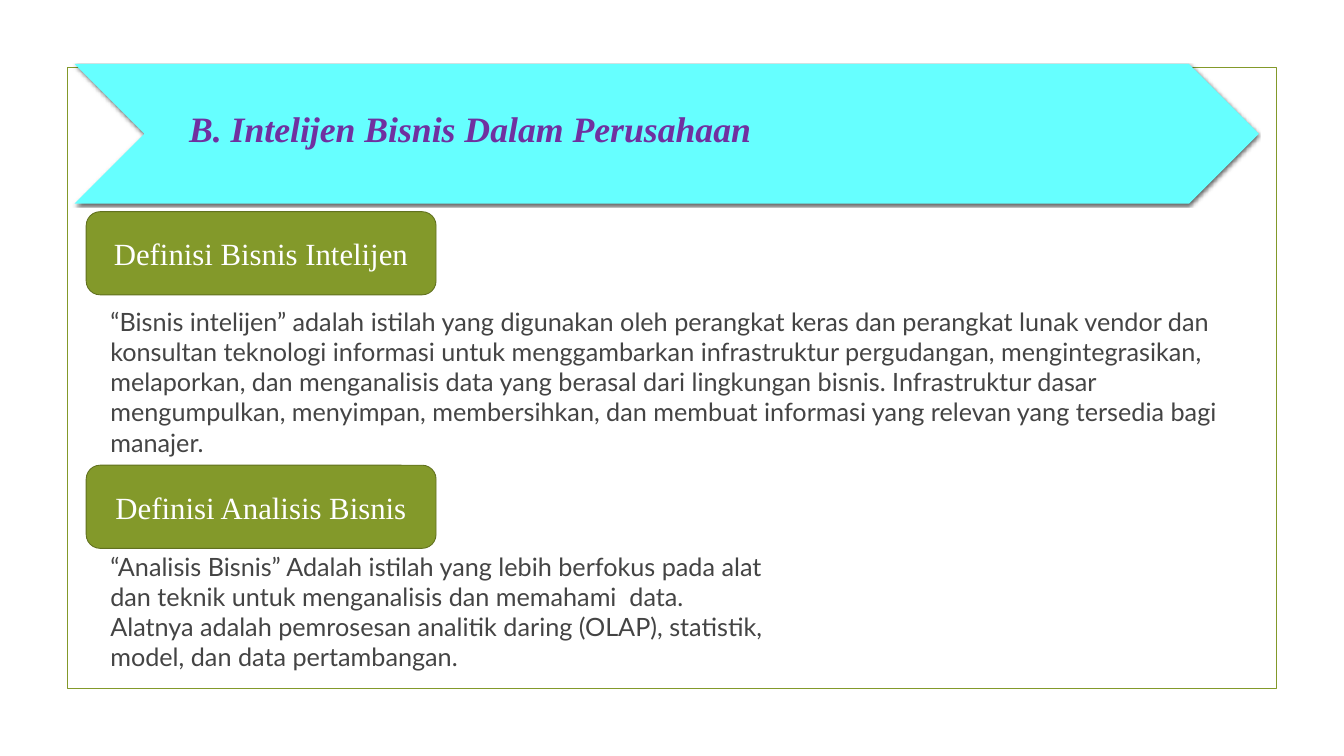
from dataclasses import dataclass, field

from lxml import etree
from pptx import Presentation
from pptx import util as u
from pptx.dml import color as col
from pptx.enum import shapes, text
from pptx.oxml import ns

SCALE = 9144
COLORS = {
    "olive": "83992A",
    "moss": "61711F",
    "cyan": "66FFFF",
    "plum": "7030A0",
    "gray": "444444",
    "white": "FFFFFF",
    "black": "000000",
}
SERIF = "Times New Roman"
BODY = {"name": "Lato", "size": u.Pt(36), "color": "gray"}
LABEL = {"name": SERIF, "size": u.Pt(44), "color": "white"}
TITLE = {"name": SERIF, "size": u.Pt(51), "color": "plum", "bold": True, "italic": True}
MIDDLE = {"vertical_anchor": text.MSO_ANCHOR.MIDDLE}


@dataclass
class Panel:
    kind: shapes.MSO_SHAPE
    box: tuple[int, int, int, int]
    fill: str | None = None
    line: str | None = None
    label: str = ""


@dataclass
class Note:
    box: tuple[int, int, int, int]
    words: str
    font: dict
    frame: dict = field(default_factory=dict)
    para: dict = field(default_factory=dict)


def px(num: int) -> int:
    return num * SCALE


def rgb(name: str) -> col.RGBColor:
    return col.RGBColor.from_string(COLORS[name])


def write(frame, words: str, font: dict, look: dict, para: dict) -> None:
    frame.word_wrap = True
    for key, val in look.items():
        setattr(frame, key, val)
    line = frame.paragraphs[0]
    for key, val in para.items():
        setattr(line, key, val)
    run = line.add_run()
    run.text = words
    for key, val in font.items():
        if key == "color":
            run.font.color.rgb = rgb(val)
        else:
            setattr(run.font, key, val)


def draw_panel(slide, panel: Panel):
    shape = slide.shapes.add_shape(panel.kind, *map(px, panel.box))
    shape.shadow.inherit = False
    if panel.fill:
        shape.fill.solid()
        shape.fill.fore_color.rgb = rgb(panel.fill)
    else:
        shape.fill.background()
    if panel.line:
        shape.line.color.rgb = rgb(panel.line)
        shape.line.width = u.Pt(1.25)
    else:
        shape.line.fill.background()
    if panel.label:
        write(shape.text_frame, panel.label, LABEL, MIDDLE,
              {"alignment": text.PP_ALIGN.CENTER})
    return shape


def draw_note(slide, note: Note) -> None:
    box = slide.shapes.add_textbox(*map(px, note.box))
    write(box.text_frame, note.words, note.font, note.frame, note.para)


def cast(shape) -> None:
    glow = shape.element.spPr.find(ns.qn("a:effectLst"))
    drop = etree.SubElement(glow, ns.qn("a:outerShdw"), blurRad=str(u.Pt(3)),
                            dist=str(u.Pt(2)), dir="5400000", rotWithShape="0")
    tint = etree.SubElement(drop, ns.qn("a:srgbClr"), val=COLORS["black"])
    etree.SubElement(tint, ns.qn("a:alpha"), val="60000")


BORDER = Panel(shapes.MSO_SHAPE.RECTANGLE, (133, 133, 2399, 1233), line="olive")
BANNER = Panel(shapes.MSO_SHAPE.CHEVRON, (148, 127, 2349, 277), fill="cyan")
TABS = [
    Panel(shapes.MSO_SHAPE.ROUNDED_RECTANGLE, (171, top, 694, 165), "olive", "moss", label)
    for top, label in ((420, "Definisi Bisnis Intelijen"), (923, "Definisi Analisis Bisnis"))
]
NOTES = [
    Note((209, 602, 2288, 313),
         "“Bisnis intelijen” adalah istilah yang digunakan oleh perangkat keras dan "
         "perangkat lunak vendor dan konsultan teknologi informasi untuk menggambarkan "
         "infrastruktur pergudangan, mengintegrasikan, melaporkan, dan menganalisis data "
         "yang berasal dari lingkungan bisnis. Infrastruktur dasar mengumpulkan, menyimpan, "
         "membersihkan, dan membuat informasi yang relevan yang tersedia bagi manajer.",
         BODY),
    Note((209, 1088, 1333, 252),
         "“Analisis Bisnis” Adalah istilah yang lebih berfokus pada alat dan teknik untuk "
         "menganalisis dan memahami  data. Alatnya adalah pemrosesan analitik daring "
         "(OLAP), statistik, model, dan data pertambangan.",
         BODY),
]
HEAD = Note((353, 138, 1410, 244), "B. Intelijen Bisnis Dalam Perusahaan", TITLE,
            {**MIDDLE, "margin_left": px(22), "margin_right": px(7),
             "margin_top": px(7), "margin_bottom": px(7)},
            {"line_spacing": 0.9})


def main() -> None:
    deck = Presentation()
    deck.slide_width, deck.slide_height = px(2666), px(1500)
    slide = deck.slides.add_slide(deck.slide_layouts[6])
    draw_panel(slide, BORDER)
    for tab in TABS:
        draw_panel(slide, tab)
    for note in NOTES:
        draw_note(slide, note)
    cast(draw_panel(slide, BANNER))
    draw_note(slide, HEAD)
    deck.save("out.pptx")


if __name__ == "__main__":
    main()
